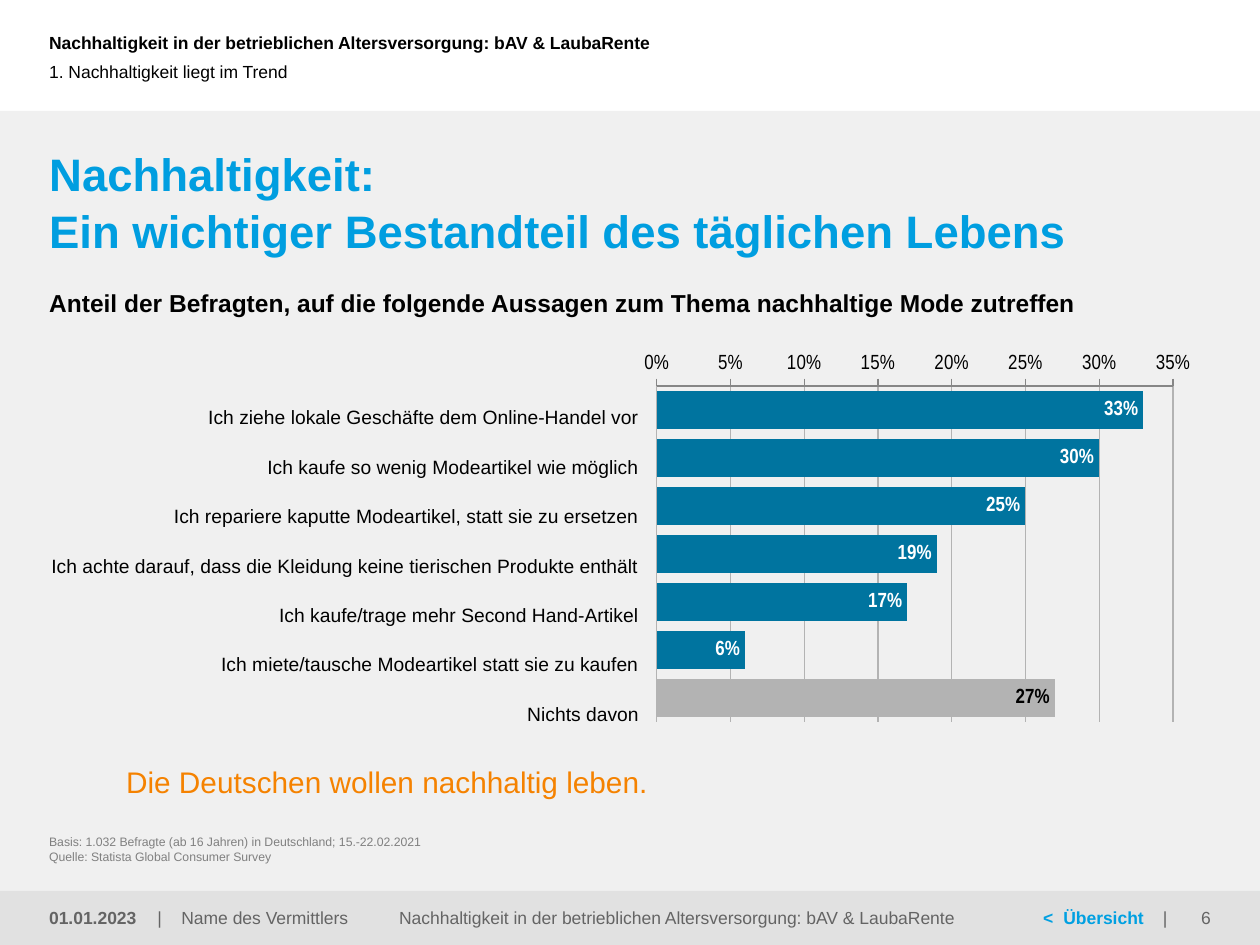
from lxml import etree
from pptx import Presentation
from pptx.chart.data import CategoryChartData
from pptx.dml.color import RGBColor
from pptx.enum.chart import XL_CHART_TYPE as ChartType, XL_LABEL_POSITION as LabelPosition
from pptx.enum.chart import XL_TICK_LABEL_POSITION as TickLabels, XL_TICK_MARK as TickMark
from pptx.enum.shapes import MSO_SHAPE as Preset
from pptx.enum.text import MSO_ANCHOR as Anchor, PP_ALIGN as Align
from pptx.oxml.ns import qn
from pptx.util import Inches, Pt

BLACK = RGBColor(0x00, 0x00, 0x00)
WHITE = RGBColor(0xFF, 0xFF, 0xFF)
PANEL = RGBColor(0xF0, 0xF0, 0xF0)
FOOTER = RGBColor(0xE1, 0xE1, 0xE1)
FOOTER_TEXT = RGBColor(0x64, 0x64, 0x64)
SOURCE_TEXT = RGBColor(0x80, 0x80, 0x80)
TITLE_BLUE = RGBColor(0x00, 0x9E, 0xE0)
LINK_BLUE = RGBColor(0x00, 0xA0, 0xE1)
ORANGE = RGBColor(0xF5, 0x82, 0x00)
BAR_BLUE = RGBColor(0x00, 0x74, 0x9F)
GREY = RGBColor(0xB3, 0xB3, 0xB3)
AXIS_GREY = RGBColor(0x86, 0x86, 0x86)

WIDTH, HEIGHT = 10, 7.5
MARGIN = 0.39
CONTENT = WIDTH - 2 * MARGIN
PANEL_TOP = 0.88
FOOTER_TOP, FOOTER_HEIGHT = 7.07, 0.43
FIRST_ROW, LAST_ROW = 3.22, 5.57
TOPIC = "Nachhaltigkeit in der betrieblichen Altersversorgung: bAV & LaubaRente"

answers = [
    ("Ich ziehe lokale Geschäfte dem Online-Handel vor", 0.33),
    ("Ich kaufe so wenig Modeartikel wie möglich", 0.30),
    ("Ich repariere kaputte Modeartikel, statt sie zu ersetzen", 0.25),
    ("Ich achte darauf, dass die Kleidung keine tierischen Produkte enthält", 0.19),
    ("Ich kaufe/trage mehr Second Hand-Artikel", 0.17),
    ("Ich miete/tausche Modeartikel statt sie zu kaufen", 0.06),
    ("Nichts davon", 0.27),
]

prs = Presentation()
prs.slide_width, prs.slide_height = Inches(WIDTH), Inches(HEIGHT)
slide = prs.slides.add_slide(prs.slide_layouts[5])
title = slide.shapes.title


def write(text, left, top, width, height, size, color=BLACK, bold=False,
          align=Align.LEFT, anchor=Anchor.MIDDLE, spacing=1.0, tabs=(), box=None):
    """Fill a new text box, or the given one, and return its first paragraph."""
    if box is None:
        box = slide.shapes.add_textbox(0, 0, 0, 0)
    box.left, box.top = Inches(left), Inches(top)
    box.width, box.height = Inches(width), Inches(height)
    frame = box.text_frame
    frame.text = text
    frame.word_wrap = True
    frame.vertical_anchor = anchor
    frame.margin_left = frame.margin_right = frame.margin_top = frame.margin_bottom = 0
    for paragraph in frame.paragraphs:
        paragraph.alignment, paragraph.line_spacing = align, spacing
        paragraph.space_before = Pt(0)
        if tabs:
            stops = etree.SubElement(paragraph._p.get_or_add_pPr(), qn("a:tabLst"))
            for stop in tabs:
                etree.SubElement(stops, qn("a:tab"), pos=str(Inches(stop)), algn="l")
        for run in paragraph.runs:
            run.font.name, run.font.size = "Arial", Pt(size)
            run.font.bold, run.font.color.rgb = bold, color
    return frame.paragraphs[0]


# Background bands, behind the title
for top, height, color in [(PANEL_TOP, HEIGHT - PANEL_TOP, PANEL),
                           (FOOTER_TOP, FOOTER_HEIGHT, FOOTER)]:
    band = slide.shapes.add_shape(Preset.RECTANGLE, 0, Inches(top), prs.slide_width, Inches(height))
    band.shadow.inherit = False
    band.fill.solid()
    band.fill.fore_color.rgb = color
    band.line.fill.background()
    title._element.addprevious(band._element)

# Header, title and statements
write(TOPIC, MARGIN, 0, 6.5, 0.67, 10, bold=True)
write("1. Nachhaltigkeit liegt im Trend", MARGIN, 0.25, 6.76, 0.63, 10)
write("Nachhaltigkeit:\nEin wichtiger Bestandteil des täglichen Lebens", MARGIN, 1.14, CONTENT, 0.55,
      26, TITLE_BLUE, True, anchor=Anchor.TOP, spacing=1.04, box=title)
write("Anteil der Befragten, auf die folgende Aussagen zum Thema nachhaltige Mode zutreffen",
      MARGIN, 2.28, CONTENT, 0.24, 14, bold=True, anchor=Anchor.TOP, spacing=1.04)
write("Die Deutschen wollen nachhaltig leben.", 1, 5.9, 8.61, 0.6, 17, ORANGE)
write("Basis: 1.032 Befragte (ab 16 Jahren) in Deutschland; 15.-22.02.2021\n"
      "Quelle: Statista Global Consumer Survey",
      MARGIN, 6.74, CONTENT, 0.12, 7, SOURCE_TEXT, anchor=Anchor.BOTTOM, spacing=1.04)

# Footer
write("01.01.2023", MARGIN, FOOTER_TOP, 0.83, FOOTER_HEIGHT, 10, FOOTER_TEXT, True)
write("|\tName des Vermittlers", 1.25, FOOTER_TOP, 1.7, FOOTER_HEIGHT, 10, FOOTER_TEXT, tabs=[0.19])
write(TOPIC, 2.97, FOOTER_TOP, 4.8, FOOTER_HEIGHT, 10, FOOTER_TEXT, align=Align.CENTER)
overview = write("<\tÜbersicht", 8.28, FOOTER_TOP, 1.1, FOOTER_HEIGHT, 10, LINK_BLUE, True,
                 tabs=[0.16, 0.95])
divider = overview.add_run()
divider.text = "\t|"
divider.font.name, divider.font.size = "Arial", Pt(10)
divider.font.color.rgb = FOOTER_TEXT
write("6", 9.06, FOOTER_TOP, WIDTH - MARGIN - 9.06, FOOTER_HEIGHT, 10, FOOTER_TEXT, align=Align.RIGHT)

# Chart
survey = CategoryChartData(number_format="0%")
survey.categories = [str(number) for number in range(1, len(answers) + 1)]
survey.add_series("Series 1", [share for _, share in answers])
chart = slide.shapes.add_chart(ChartType.BAR_STACKED, Inches(5), Inches(2.81),
                               Inches(4.61), Inches(3.02), survey).chart
chart.has_legend = chart.has_title = False
chart.font.name, chart.font.size = "Arial Narrow", Pt(11.8)
chart.font.color.rgb = BLACK

plot_area = chart._chartSpace.chart.plotArea
for old_layout in plot_area.findall(qn("c:layout")):
    plot_area.remove(old_layout)
layout = etree.Element(qn("c:layout"))
manual = etree.SubElement(layout, qn("c:manualLayout"))
for tag, value in [("layoutTarget", "inner"), ("xMode", "edge"), ("yMode", "edge"),
                   ("x", "0.046"), ("y", "0.079"), ("w", "0.889"), ("h", "0.888")]:
    etree.SubElement(manual, qn("c:" + tag), val=value)
plot_area.insert(0, layout)

chart.category_axis.visible = False
chart.category_axis.reverse_order = True
share_axis = chart.value_axis
share_axis.minimum_scale, share_axis.maximum_scale, share_axis.major_unit = 0, 0.35, 0.05
share_axis.major_tick_mark = TickMark.OUTSIDE
share_axis.tick_label_position = TickLabels.NEXT_TO_AXIS
share_axis.tick_labels.number_format = "0%"
share_axis.tick_labels.number_format_is_linked = False
share_axis.format.line.color.rgb = AXIS_GREY
share_axis.format.line.width = Pt(0.75)
share_axis.major_gridlines.format.line.color.rgb = GREY
share_axis.major_gridlines.format.line.width = Pt(0.75)

bars = chart.plots[0]
bars.gap_width, bars.overlap = 25, 100
bars.vary_by_categories = False
shares = bars.series[0]
shares.format.fill.solid()
shares.format.fill.fore_color.rgb = BAR_BLUE
none_bar = shares.points[len(answers) - 1]
none_bar.format.fill.solid()
none_bar.format.fill.fore_color.rgb = GREY
none_label = none_bar.data_label
none_label.font.bold, none_label.font.size = True, Pt(11.8)
none_label.font.color.rgb = BLACK
none_label.position = LabelPosition.INSIDE_END
labels = shares.data_labels
labels.show_value = True
labels.number_format, labels.number_format_is_linked = "0%", False
labels.position = LabelPosition.INSIDE_END
labels.font.bold, labels.font.size = True, Pt(11.8)
labels.font.color.rgb = WHITE

# Answer labels beside the bars
row_step = (LAST_ROW - FIRST_ROW) / (len(answers) - 1)
for row, (answer, _) in enumerate(answers):
    write(answer, MARGIN, FIRST_ROW + row * row_step, 4.68, 0.19, 11,
          align=Align.RIGHT, anchor=Anchor.TOP)

prs.save("out.pptx")
